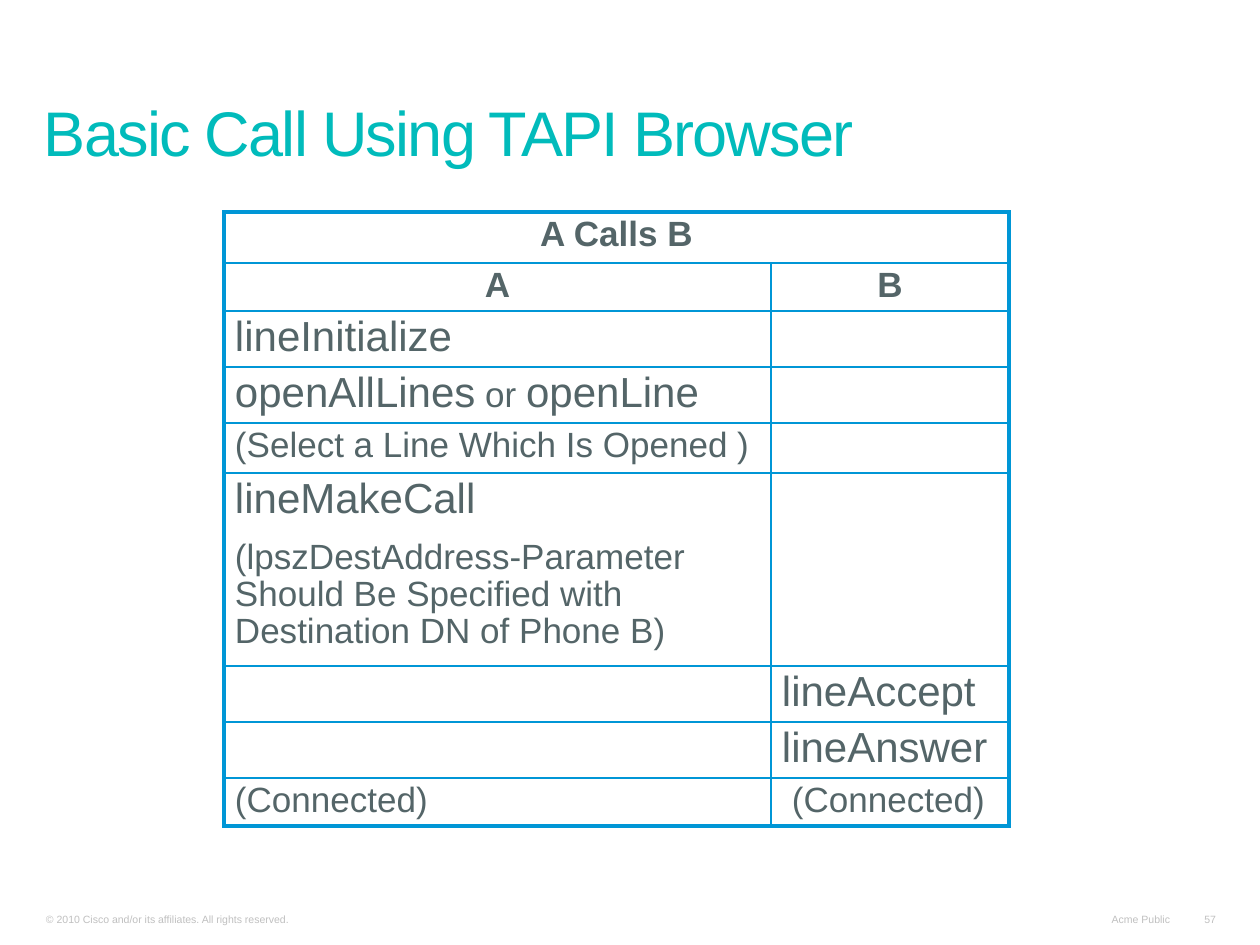
from dataclasses import dataclass

import pptx
import pptx.dml.color
import pptx.enum.text
import pptx.oxml
import pptx.oxml.ns
import pptx.util

ALIGN = pptx.enum.text.PP_ALIGN
ANCHOR = pptx.enum.text.MSO_ANCHOR
AUTO_SIZE = pptx.enum.text.MSO_AUTO_SIZE
EMU_PER_PX = 914400 / 126


@dataclass(frozen=True)
class Theme:
    font: str = "Arial"
    title_color: str = "01BBBB"
    body_color: str = "546568"
    footer_color: str = "C0C0C0"
    border_color: str = "0096D6"
    title_size: int = 36
    function_size: int = 24
    note_size: int = 20
    footer_size: int = 6
    outer_border: float = 2.25
    inner_border: float = 1


THEME = Theme()


@dataclass(frozen=True)
class Run:
    text: str
    size: int
    color: str = THEME.body_color
    bold: bool = False


@dataclass(frozen=True)
class Line:
    """One paragraph; indent is in px."""
    runs: tuple[Run, ...]
    align: ALIGN = ALIGN.LEFT
    spacing: float = 0.95
    indent: int = 0


@dataclass(frozen=True)
class TextBox:
    left: int
    top: int
    width: int
    height: int
    line: Line
    inset: int = 5
    wrap: bool = True
    auto_size: AUTO_SIZE = AUTO_SIZE.SHAPE_TO_FIT_TEXT
    tracking: int = 0


@dataclass(frozen=True)
class Row:
    height: int
    caller: tuple[Line, ...] = ()
    callee: tuple[Line, ...] = ()


def px(length: int) -> pptx.util.Emu:
    return pptx.util.Emu(round(length * EMU_PER_PX))


def set_attributes(target: object, values: dict) -> None:
    for name, value in values.items():
        setattr(target, name, value)


def heading(text: str) -> Line:
    return Line((Run(text, THEME.note_size, bold=True),), ALIGN.CENTER)


def function(text: str) -> Line:
    return Line((Run(text, THEME.function_size),))


def note(text: str, indent: int = 0) -> Line:
    return Line((Run(text, THEME.note_size),), indent=indent)


def footer(text: str, align: ALIGN = ALIGN.LEFT) -> Line:
    return Line((Run(text, THEME.footer_size, THEME.footer_color),), align, 1.0)


TEXT_BOXES = (
    TextBox(34, 907, 471, 24,
            footer("© 2010 Cisco and/or its affiliates. All rights reserved.")),
    TextBox(1090, 907, 92, 24, footer("Acme Public", ALIGN.RIGHT), wrap=False),
    TextBox(1185, 907, 43, 24, footer("57", ALIGN.RIGHT), wrap=False),
    TextBox(32, 59, 1183, 116,
            Line((Run("Basic Call Using TAPI Browser", THEME.title_size, THEME.title_color),),
                 spacing=0.8),
            inset=6, auto_size=AUTO_SIZE.NONE, tracking=-100),
)

TABLE_LEFT, TABLE_TOP = 224, 212
COLUMN_WIDTHS = (547, 238)
ROWS = (
    Row(51, (heading("A Calls B"),)),
    Row(48, (heading("A"),), (heading("B"),)),
    Row(56, (function("lineInitialize"),)),
    Row(56, (Line((Run("openAllLines", THEME.function_size),
                   Run(" or ", THEME.note_size),
                   Run("openLine", THEME.function_size))),)),
    Row(50, (note("(Select a Line Which Is Opened )"),)),
    Row(185, (function("lineMakeCall"),
              note("(lpszDestAddress-Parameter Should Be Specified with "
                   "Destination DN of Phone B)"))),
    Row(56, callee=(function("lineAccept"),)),
    Row(56, callee=(function("lineAnswer"),)),
    Row(48, (note("(Connected)"),), (note("(Connected)", indent=10),)),
)


def write_line(paragraph, line: Line, tracking: int = 0) -> None:
    if line.indent:
        paragraph._p.get_or_add_pPr().set("marL", str(px(line.indent)))
    set_attributes(paragraph, {"alignment": line.align, "line_spacing": line.spacing})
    for part in line.runs:
        run = paragraph.add_run()
        run.text = part.text
        set_attributes(run.font, {"name": THEME.font, "size": pptx.util.Pt(part.size),
                                  "bold": part.bold})
        run.font.color.rgb = pptx.dml.color.RGBColor.from_string(part.color)
        if tracking:
            run._r.get_or_add_rPr().set("spc", str(tracking))


def add_half_line_before(paragraph) -> None:
    """Space before as a share of the line, which python-pptx gives only in points."""
    space = pptx.oxml.parse_xml(
        f'<a:spcBef {pptx.oxml.ns.nsdecls("a")}><a:spcPct val="50000"/></a:spcBef>')
    paragraph._p.pPr.find(pptx.oxml.ns.qn("a:lnSpc")).addnext(space)


def add_text_box(slide, box: TextBox) -> None:
    shape = slide.shapes.add_textbox(px(box.left), px(box.top), px(box.width), px(box.height))
    set_attributes(shape.text_frame, {
        "word_wrap": box.wrap, "auto_size": box.auto_size, "vertical_anchor": ANCHOR.BOTTOM,
        "margin_left": px(12), "margin_right": px(12),
        "margin_top": px(box.inset), "margin_bottom": px(box.inset)})
    write_line(shape.text_frame.paragraphs[0], box.line, box.tracking)


def set_borders(cell, widths: dict[str, float]) -> None:
    """Put the border lines ahead of the fill, as the schema orders them."""
    properties = cell._tc.get_or_add_tcPr()
    for position, (side, width) in enumerate(widths.items()):
        border = pptx.oxml.parse_xml(
            f'<a:ln{side} {pptx.oxml.ns.nsdecls("a")} w="{pptx.util.Pt(width)}">'
            f'<a:solidFill><a:srgbClr val="{THEME.border_color}"/></a:solidFill></a:ln{side}>')
        properties.insert(position, border)


def fill_cell(cell, lines: tuple[Line, ...]) -> None:
    set_attributes(cell, {"margin_left": px(11), "margin_right": px(11),
                          "margin_top": px(5), "margin_bottom": px(3),
                          "vertical_anchor": ANCHOR.TOP})
    cell.fill.background()
    frame = cell.text_frame
    for index, line in enumerate(lines):
        paragraph = frame.add_paragraph() if index else frame.paragraphs[0]
        write_line(paragraph, line)
        if index:
            add_half_line_before(paragraph)


def add_call_table(slide) -> None:
    table = slide.shapes.add_table(
        len(ROWS), len(COLUMN_WIDTHS), px(TABLE_LEFT), px(TABLE_TOP),
        px(sum(COLUMN_WIDTHS)), px(sum(row.height for row in ROWS))).table
    set_attributes(table, {"first_row": False, "horz_banding": False})
    for column, width in zip(table.columns, COLUMN_WIDTHS):
        column.width = px(width)
    last_row, last_column = len(ROWS) - 1, len(COLUMN_WIDTHS) - 1
    table.cell(0, 0).merge(table.cell(0, last_column))
    for row_index, row in enumerate(ROWS):
        table.rows[row_index].height = px(row.height)
        for column_index, lines in enumerate((row.caller, row.callee)):
            cell = table.cell(row_index, column_index)
            fill_cell(cell, lines)
            on_edge = {"L": column_index == 0,
                       "R": column_index == last_column or cell.is_merge_origin,
                       "T": row_index == 0, "B": row_index == last_row}
            set_borders(cell, {side: THEME.outer_border if edge else THEME.inner_border
                               for side, edge in on_edge.items()})


def main() -> None:
    presentation = pptx.Presentation()
    set_attributes(presentation, {"slide_width": px(1260), "slide_height": px(945)})
    slide = presentation.slides.add_slide(presentation.slide_layouts[6])
    for box in TEXT_BOXES:
        add_text_box(slide, box)
    add_call_table(slide)
    presentation.save("out.pptx")


if __name__ == "__main__":
    main()
